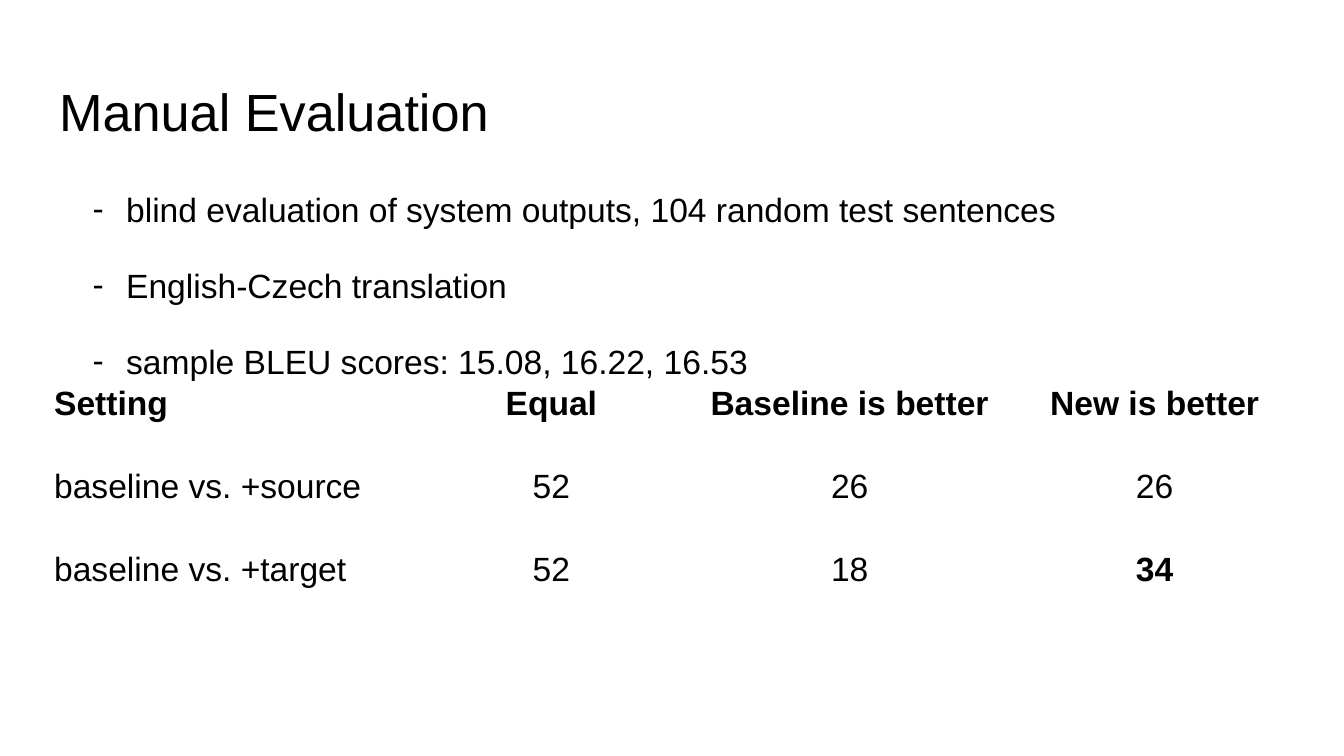
from dataclasses import dataclass

from lxml.etree import SubElement
from pptx import Presentation
from pptx.dml.color import RGBColor
from pptx.enum.text import MSO_ANCHOR, MSO_AUTO_SIZE, PP_ALIGN
from pptx.oxml.ns import qn
from pptx.util import Pt


@dataclass(frozen=True)
class Theme:
    font: str = "Arial"
    text: RGBColor = RGBColor(0, 0, 0)
    title_size: float = 28
    body_size: float = 18
    inset: float = 7.2


class SlideBuilder:
    def __init__(self, slide, theme):
        self.slide = slide
        self.theme = theme

    def style_paragraph(self, paragraph, size, bold=False, alignment=PP_ALIGN.LEFT):
        paragraph.alignment = alignment
        font = paragraph.font
        font.name = self.theme.font
        font.size = Pt(size)
        font.bold = bold
        font.color.rgb = self.theme.text

    def set_margins(self, target):
        """Give a text frame or a table cell the theme's inset on all sides."""
        inset = Pt(self.theme.inset)
        target.margin_left = target.margin_right = inset
        target.margin_top = target.margin_bottom = inset

    def prepare_frame(self, frame):
        frame.word_wrap = True
        frame.auto_size = MSO_AUTO_SIZE.NONE
        frame.vertical_anchor = MSO_ANCHOR.TOP
        self.set_margins(frame)

    def clear_cell(self, cell):
        """Remove the borders and fill that the table style gives a cell."""
        properties = cell._tc.get_or_add_tcPr()
        for side in ("a:lnL", "a:lnR", "a:lnT", "a:lnB"):
            border = SubElement(properties, qn(side), w="0")
            SubElement(border, qn("a:noFill"))
        cell.fill.background()

    def add_title(self, text, left, top, width, height):
        title = self.slide.shapes.title
        title.left, title.top = Pt(left), Pt(top)
        title.width, title.height = Pt(width), Pt(height)
        self.prepare_frame(title.text_frame)
        title.text_frame.text = text
        self.style_paragraph(title.text_frame.paragraphs[0], self.theme.title_size)

    def add_bullets(self, items, left, top, width, height):
        box = self.slide.shapes.add_textbox(Pt(left), Pt(top), Pt(width), Pt(height))
        frame = box.text_frame
        self.prepare_frame(frame)
        frame.text = "\n".join(items)
        for paragraph in frame.paragraphs:
            paragraph.line_spacing = 1.15
            paragraph.space_after = Pt(16)
            properties = paragraph._p.get_or_add_pPr()
            properties.set("marL", str(Pt(36)))
            properties.set("indent", str(Pt(-18)))
            SubElement(properties, qn("a:buFont"), typeface=self.theme.font)
            SubElement(properties, qn("a:buChar"), char="-")
            self.style_paragraph(paragraph, self.theme.body_size)

    def add_table(self, rows, left, top, column_widths, row_height, bold_cells):
        """Add a plain table; bold_cells lists (row, column) pairs beyond the header."""
        frame = self.slide.shapes.add_table(
            len(rows), len(column_widths), Pt(left), Pt(top),
            Pt(sum(column_widths)), Pt(row_height * len(rows)))
        table = frame.table
        table.first_row = table.horz_banding = False
        for column, width in zip(table.columns, column_widths):
            column.width = Pt(width)
        for row_index, values in enumerate(rows):
            for column_index, value in enumerate(values):
                cell = table.cell(row_index, column_index)
                self.clear_cell(cell)
                cell.vertical_anchor = MSO_ANCHOR.TOP
                self.set_margins(cell)
                cell.text = value
                self.style_paragraph(
                    cell.text_frame.paragraphs[0], self.theme.body_size,
                    bold=row_index == 0 or (row_index, column_index) in bold_cells,
                    alignment=PP_ALIGN.CENTER if column_index else PP_ALIGN.LEFT)


def main():
    presentation = Presentation()
    presentation.slide_width, presentation.slide_height = Pt(720), Pt(405)
    title_only = presentation.slide_layouts[5]
    builder = SlideBuilder(presentation.slides.add_slide(title_only), Theme())

    left, width = 24.5, 671
    builder.add_title("Manual Evaluation", left, 35.3, width, 45.4)
    builder.add_bullets(
        ["blind evaluation of system outputs, 104 random test sentences",
         "English-Czech translation",
         "sample BLEU scores: 15.08, 16.22, 16.53"],
        left, 90.7, width, 269.3)
    builder.add_table(
        [["Setting", "Equal", "Baseline is better", "New is better"],
         ["baseline vs. +source", "52", "26", "26"],
         ["baseline vs. +target", "52", "18", "34"]],
        left=21.8, top=199, column_widths=[197.3, 152.6, 167, 159.8],
        row_height=44.6, bold_cells=[(2, 3)])

    presentation.save("out.pptx")


if __name__ == "__main__":
    main()
